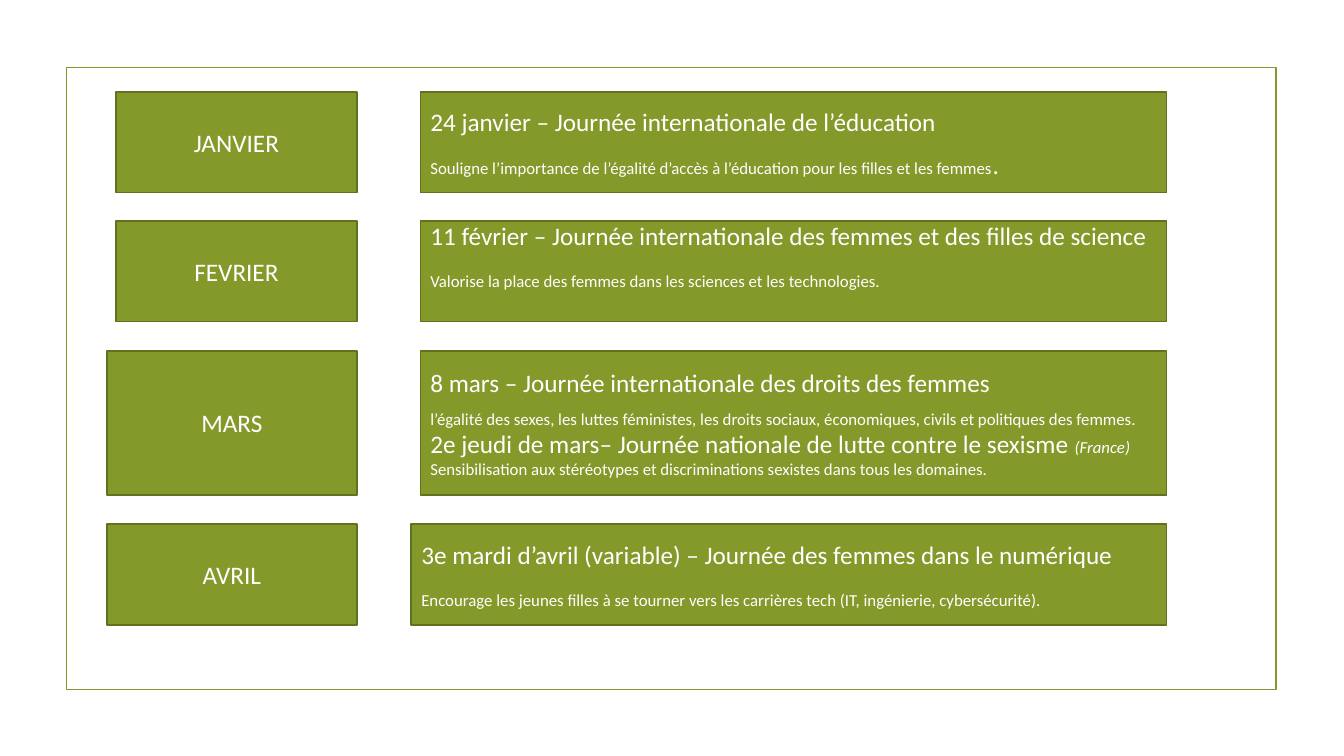
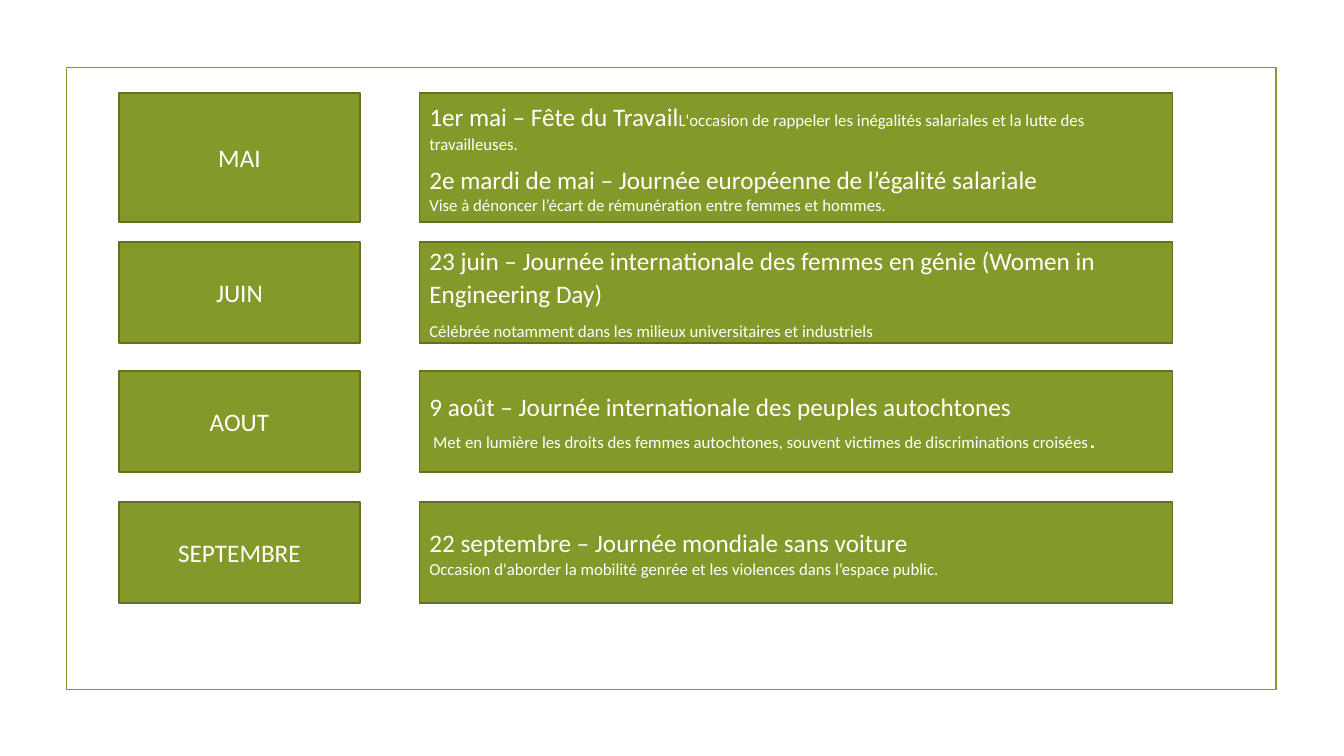
"""Build two slides listing awareness days by month."""
import pptx
import pptx.dml.color
import pptx.enum.shapes
import pptx.enum.text
import pptx.util

Inches = pptx.util.Inches
Pt = pptx.util.Pt
ALIGN = pptx.enum.text.PP_ALIGN
ANCHOR = pptx.enum.text.MSO_ANCHOR

GREEN, DARK_GREEN, WHITE = "83992A", "61711F", "FFFFFF"
BIG, SMALL = 18, 12
FRAME = (0.66, 0.67, 12, 6.17)
LOOSE = {"line_spacing": 1.07}
SPACED = {"line_spacing": 1.07, "space_before": Pt(8)}
AFTER_TITLE = {"space_before": Pt(8)}
AFTER_GAP = {"space_before": Pt(14)}
PLAIN = {}
TOP = {"vertical_anchor": ANCHOR.TOP, "margin_top": 0}

FIRST_MONTHS = [
    ("JANVIER", 0.91, 1, 1.15, 4.17, {}, [
        (LOOSE, [("24 janvier – Journée internationale de l’éducation", BIG)]),
        (SPACED, [("Souligne l’importance de l’égalité d’accès à l’éducation "
                   "pour les filles et les femmes", SMALL), (".", BIG)]),
    ]),
    ("FEVRIER", 2.19, 1, 1.15, 4.17, TOP, [
        (PLAIN, [("11 février – Journée internationale des femmes et des "
                  "filles de science", BIG)]),
        (AFTER_GAP, [("Valorise la place des femmes dans les sciences et les "
                      "technologies.", SMALL)]),
    ]),
    ("MARS", 3.48, 1.43, 1.06, 4.17, {}, [
        (PLAIN, [("8 mars – Journée internationale des droits des femmes", BIG)]),
        (AFTER_TITLE, [("l’égalité des sexes, les luttes féministes, les droits "
                        "sociaux, économiques, civils et politiques des femmes.",
                        SMALL)]),
        (PLAIN, [("2e jeudi de mars– Journée nationale de lutte contre le "
                  "sexisme ", BIG), ("(France)", SMALL, True)]),
        (PLAIN, [("Sensibilisation aux stéréotypes et discriminations sexistes "
                  "dans tous les domaines.", SMALL)]),
    ]),
    ("AVRIL", 5.2, 1, 1.06, 4.08, {}, [
        (PLAIN, [("3e mardi d’avril (variable) – Journée des femmes dans le "
                  "numérique", BIG)]),
        (AFTER_GAP, [("Encourage les jeunes filles à se tourner vers les "
                      "carrières tech (IT, ingénierie, cybersécurité).", SMALL)]),
    ]),
]

NEXT_MONTHS = [
    ("MAI", 0.92, 1.28, 1.18, 4.16, {}, [
        (LOOSE, [("1er mai – Fête du Travail", BIG),
                 ("L'occasion de rappeler les inégalités salariales et la lutte "
                  "des travailleuses.", SMALL)]),
        (AFTER_TITLE, [("2e mardi de mai – Journée européenne de l’égalité "
                        "salariale", BIG)]),
        (PLAIN, [("Vise à dénoncer l’écart de rémunération entre femmes et "
                  "hommes.", SMALL)]),
    ]),
    ("JUIN", 2.4, 1, 1.18, 4.16, {}, [
        (LOOSE, [("23 juin – Journée internationale des femmes en génie (Women "
                  "in Engineering Day)", BIG)]),
        (SPACED, [("Célébrée notamment dans les milieux universitaires et "
                   "industriels", SMALL)]),
    ]),
    ("AOUT", 3.68, 1, 1.18, 4.16, {}, [
        (LOOSE, [("9 août – Journée internationale des peuples autochtones", BIG)]),
        (LOOSE, [(" Met en lumière les droits des femmes autochtones, souvent "
                  "victimes de discriminations croisées", SMALL), (".", BIG)]),
    ]),
    ("SEPTEMBRE", 4.98, 1, 1.18, 4.16, {}, [
        (LOOSE, [("22 septembre – Journée mondiale sans voiture", BIG)]),
        (LOOSE, [("Occasion d'aborder la mobilité genrée et les violences dans "
                  "l’espace public.", SMALL)]),
    ]),
]


def color(value):
    """Return the colour of a hex string."""
    return pptx.dml.color.RGBColor.from_string(value)


def set_format(target, values):
    """Set each attribute named in values on target."""
    for name, value in values.items():
        setattr(target, name, value)


def add_box(s, at, line, fill=None):
    """Add an outlined rectangle, filled when a colour is given."""
    sp = s.shapes.add_shape(pptx.enum.shapes.MSO_SHAPE.RECTANGLE,
                            *(Inches(v) for v in at))
    sp.shadow.inherit = False
    if fill:
        sp.fill.solid()
        sp.fill.fore_color.rgb = color(fill)
    else:
        sp.fill.background()
    sp.line.color.rgb = color(line)
    sp.line.width = Pt(1.25)
    return sp


def add_run(p, text, size, italic=False):
    """Add a white run to a paragraph."""
    r = p.add_run()
    r.text = text
    set_format(r.font, {"name": "Calibri", "size": Pt(size), "italic": italic})
    r.font.color.rgb = color(WHITE)


def add_card(s, at, lines, align, frame_format):
    """Add a green card holding formatted lines of text."""
    tf = add_box(s, at, DARK_GREEN, GREEN).text_frame
    set_format(tf, {"word_wrap": True, "vertical_anchor": ANCHOR.MIDDLE,
                    **frame_format})
    for i, (line_format, runs) in enumerate(lines):
        p = tf.add_paragraph() if i else tf.paragraphs[0]
        set_format(p, {"alignment": align, **line_format})
        for run in runs:
            add_run(p, *run)


def add_calendar(prs, months, label_right, card_right):
    """Add a framed slide with one row of two cards per month."""
    s = prs.slides.add_slide(prs.slide_layouts[6])
    add_box(s, FRAME, GREEN)
    for month, top, height, label_left, card_left, frame_format, lines in months:
        add_card(s, (label_left, top, label_right - label_left, height),
                 [(PLAIN, [(month, BIG)])], ALIGN.CENTER, {})
        add_card(s, (card_left, top, card_right - card_left, height),
                 lines, ALIGN.LEFT, frame_format)


def main():
    """Build and save the presentation."""
    prs = pptx.Presentation()
    set_format(prs, {"slide_width": Inches(13.33), "slide_height": Inches(7.5)})
    add_calendar(prs, FIRST_MONTHS, 3.54, 11.57)
    add_calendar(prs, NEXT_MONTHS, 3.57, 11.63)
    prs.save("out.pptx")


if __name__ == "__main__":
    main()
